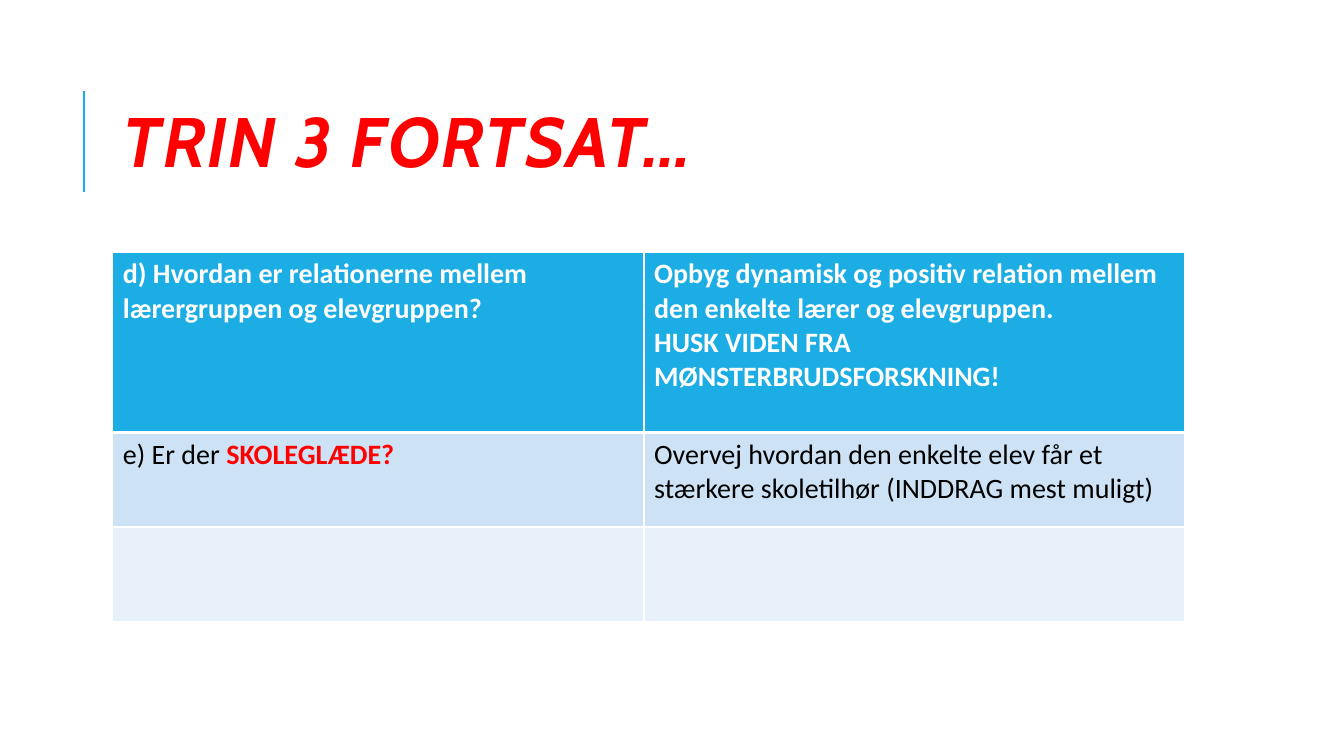
from dataclasses import dataclass

from lxml import etree
from pptx import Presentation
from pptx.dml.color import RGBColor
from pptx.enum import shapes, text
from pptx.oxml import ns
from pptx.util import Pt

COLORS = {
    "accent": "1CADE4",
    "alert": "FF0000",
    "white": "FFFFFF",
    "black": "000000",
    "band_dark": "CDE3F5",
    "band_light": "E8F1FA",
}


@dataclass(frozen=True)
class Span:
    content: str
    color: str
    bold: bool = False


@dataclass(frozen=True)
class TableRow:
    height: float
    fill: str
    cells: tuple[tuple[tuple[Span, ...], ...], ...]  # cells > paragraphs > spans
    bottom_border: float = 1


def header(content: str) -> tuple[Span, ...]:
    return (Span(content, "white", True),)


TABLE_ROWS = [
    TableRow(129, "accent", (
        (header("d) Hvordan er relationerne mellem"),
         header("lærergruppen og elevgruppen?")),
        (header("Opbyg dynamisk og positiv relation mellem den enkelte lærer og elevgruppen."),
         header("HUSK VIDEN FRA MØNSTERBRUDSFORSKNING!")),
    ), bottom_border=3),
    TableRow(67.5, "band_dark", (
        ((Span("e) Er der ", "black"), Span("SKOLEGLÆDE?", "alert", True)),),
        ((Span("Overvej hvordan den enkelte elev får et stærkere skoletilhør "
               "(INDDRAG mest muligt)", "black"),),),
    )),
    TableRow(67.5, "band_light", ((), ())),
]
COLUMN_WIDTHS = (379.5, 386)
LEFT = 80.6


def rgb(name: str) -> RGBColor:
    return RGBColor.from_string(COLORS[name])


def set_borders(cell, widths: dict[str, float]) -> None:
    """Add white cell borders ahead of the fill, as the schema orders them."""
    properties = cell._tc.get_or_add_tcPr()
    for position, (side, width) in enumerate(widths.items()):
        line = etree.Element(ns.qn(f"a:{side}"), w=str(int(Pt(width))))
        fill = etree.SubElement(line, ns.qn("a:solidFill"))
        etree.SubElement(fill, ns.qn("a:srgbClr"), val=COLORS["white"])
        properties.insert(position, line)


def fill_cell(cell, paragraphs: tuple[tuple[Span, ...], ...]) -> None:
    text_frame = cell.text_frame
    for index, spans in enumerate(paragraphs):
        paragraph = text_frame.add_paragraph() if index else text_frame.paragraphs[0]
        for span in spans:
            run = paragraph.add_run()
            run.text = span.content
            run.font.name = "Calibri"
            run.font.size = Pt(20)
            run.font.bold = span.bold
            run.font.color.rgb = rgb(span.color)


def add_accent_line(slide) -> None:
    line = slide.shapes.add_connector(
        shapes.MSO_CONNECTOR.STRAIGHT, Pt(60), Pt(137), Pt(60), Pt(65))
    line.line.color.rgb = rgb("accent")
    line.line.width = Pt(1.5)
    etree.SubElement(line._element.spPr, ns.qn("a:effectLst"))


def add_title(slide) -> None:
    title = slide.shapes.add_textbox(Pt(LEFT), Pt(46), Pt(sum(COLUMN_WIDTHS)), Pt(118))
    text_frame = title.text_frame
    text_frame.word_wrap = True
    text_frame.vertical_anchor = text.MSO_ANCHOR.MIDDLE
    text_frame.text = "TRIN 3 FORTSAT…"
    paragraph = text_frame.paragraphs[0]
    paragraph.line_spacing = 0.8
    run = paragraph.runs[0]
    run.font.name = "Cabin"
    run.font.size = Pt(50)
    run.font.bold = run.font.italic = True
    run.font.color.rgb = rgb("alert")
    run.font._element.set("spc", "100")


def add_question_table(slide) -> None:
    height = sum(row.height for row in TABLE_ROWS)
    table = slide.shapes.add_table(
        len(TABLE_ROWS), len(COLUMN_WIDTHS),
        Pt(LEFT), Pt(180), Pt(sum(COLUMN_WIDTHS)), Pt(height)).table
    for column, width in zip(table.columns, COLUMN_WIDTHS):
        column.width = Pt(width)
    top_border = 1
    for row_index, row in enumerate(TABLE_ROWS):
        table.rows[row_index].height = Pt(row.height)
        for column_index, paragraphs in enumerate(row.cells):
            cell = table.cell(row_index, column_index)
            cell.fill.solid()
            cell.fill.fore_color.rgb = rgb(row.fill)
            set_borders(cell, {"lnL": 1, "lnR": 1, "lnT": top_border,
                               "lnB": row.bottom_border})
            fill_cell(cell, paragraphs)
        top_border = row.bottom_border


def main() -> None:
    presentation = Presentation()
    presentation.slide_width = Pt(960)
    presentation.slide_height = Pt(540)
    slide = presentation.slides.add_slide(presentation.slide_layouts[6])

    # Heading with its accent line
    add_accent_line(slide)
    add_title(slide)

    # Questions and actions
    add_question_table(slide)

    presentation.save("out.pptx")


if __name__ == "__main__":
    main()
